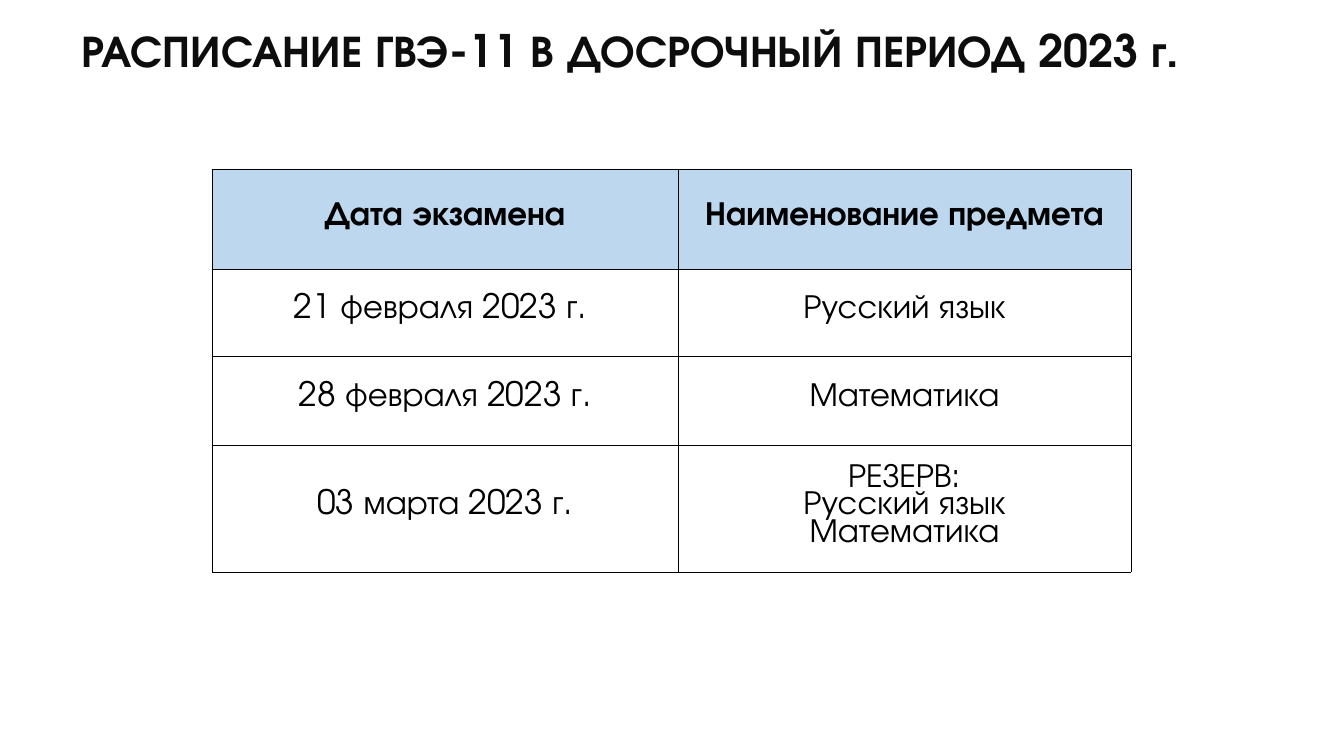
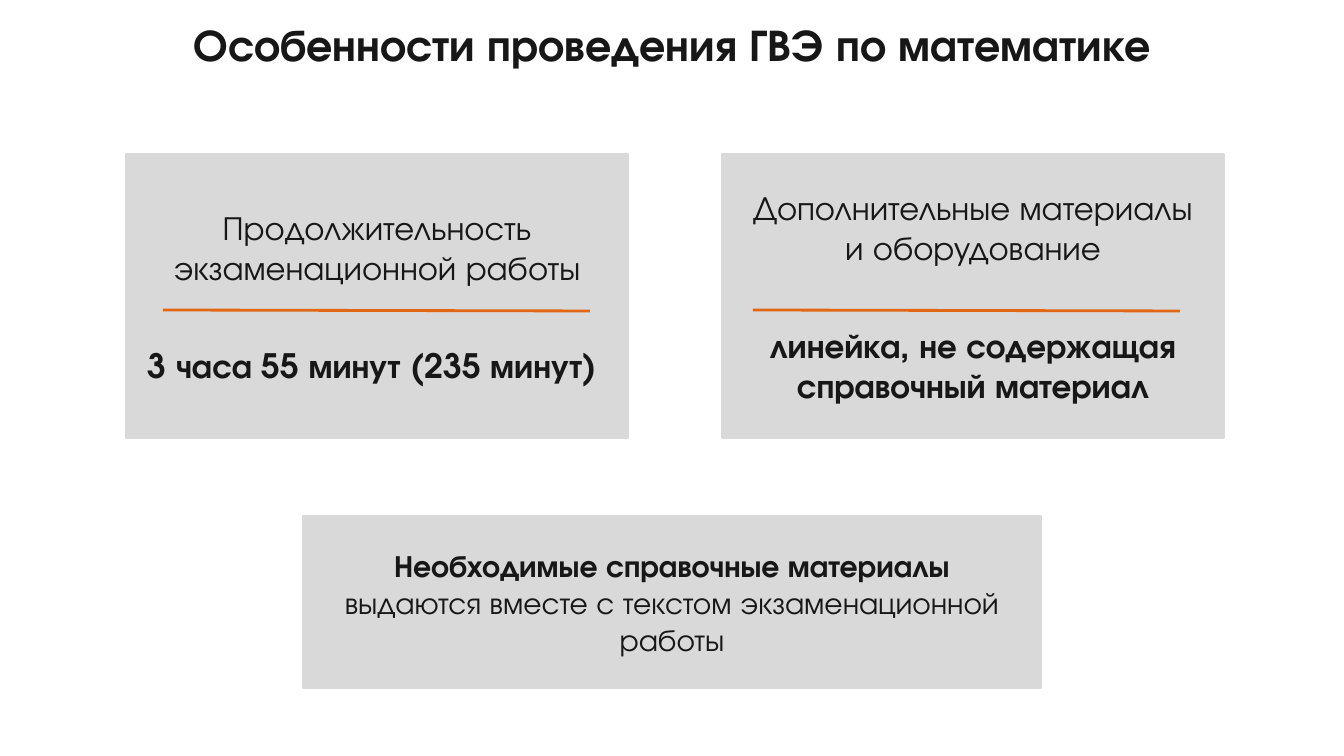
"""Build two slides on the GVE-11 exam: the schedule and the mathematics rules."""
from lxml.etree import SubElement
from pptx import Presentation
from pptx.dml.color import RGBColor
from pptx.enum.shapes import MSO_CONNECTOR, MSO_SHAPE
from pptx.enum.text import MSO_ANCHOR, MSO_AUTO_SIZE, PP_ALIGN
from pptx.oxml.ns import qn
from pptx.util import Emu, Pt

FONT = "TeX Gyre Adventor"
NBSP = chr(160)
BLACK = RGBColor(0x00, 0x00, 0x00)
NEAR_BLACK = RGBColor(0x0D, 0x0D, 0x0D)
INK = RGBColor(0x18, 0x17, 0x17)
WHITE = RGBColor(0xFF, 0xFF, 0xFF)
SKY = RGBColor(0xBD, 0xD7, 0xEE)
GREY = RGBColor(0xD9, 0xD9, 0xD9)
ORANGE = RGBColor(0xE2, 0x67, 0x14)

SCHEDULE_TITLE = "РАСПИСАНИЕ ГВЭ-11 В ДОСРОЧНЫЙ ПЕРИОД 2023 г."
SCHEDULE = [
    (["Дата экзамена"], ["Наименование предмета"]),
    (["21 февраля 2023 г. "], ["Русский язык"]),
    (["28 февраля 2023 г."], ["Математика"]),
    (["03 марта 2023 г."], ["РЕЗЕРВ:", "Русский язык", "Математика"]),
]
COL_WIDTHS = [466, 453]
ROW_HEIGHTS = [100, 87, 89, 127]

MATH_TITLE = "Особенности проведения ГВЭ по математике"
CARDS = [
    (126, 163, "Продолжительность экзаменационной работы",
     f"3{NBSP}часа 55 минут (235{NBSP}минут) "),
    (722, 753, f"Дополнительные материалы и{NBSP}оборудование",
     "линейка, не содержащая справочный материал"),
]
NOTE = ("Необходимые справочные материалы",
        f"выдаются вместе с{NBSP}текстом экзаменационной работы")
CARD_TOP, CARD_W, CARD_H = 154, 502, 284
RULE_Y, RULE_W = 310, 427


def px(n):
    return Emu(round(n * 914400 / 100.8))


def add_text(p, text, size, color, bold=False, align=PP_ALIGN.CENTER):
    p.alignment = align
    r = p.add_run()
    r.text = text
    r.font.name, r.font.size, r.font.bold = FONT, Pt(size), bold
    r.font.color.rgb = color


def add_slide(prs, title, box, color, align):
    s = prs.slides.add_slide(prs.slide_layouts[5])
    sp = s.shapes.title
    sp.left, sp.top, sp.width, sp.height = map(px, box)
    tf = sp.text_frame
    tf.auto_size = MSO_AUTO_SIZE.NONE
    tf.vertical_anchor = MSO_ANCHOR.MIDDLE
    add_text(tf.paragraphs[0], title, 32, color, True, align)
    return s


def set_borders(cell):
    tcPr = cell._tc.get_or_add_tcPr()
    for i, side in enumerate(("a:lnL", "a:lnR", "a:lnT", "a:lnB")):
        ln = SubElement(tcPr, qn(side), w=str(Pt(0.5)))
        fill = SubElement(ln, qn("a:solidFill"))
        SubElement(fill, qn("a:srgbClr"), val=str(BLACK))
        tcPr.insert(i, ln)


def add_schedule(s):
    tbl = s.shapes.add_table(len(SCHEDULE), len(COL_WIDTHS), px(212), px(169),
                             px(sum(COL_WIDTHS)), px(sum(ROW_HEIGHTS))).table
    for col, w in zip(tbl.columns, COL_WIDTHS):
        col.width = px(w)
    for i, (row, h) in enumerate(zip(SCHEDULE, ROW_HEIGHTS)):
        tbl.rows[i].height = px(h)
        for j, lines in enumerate(row):
            cell = tbl.cell(i, j)
            cell.fill.solid()
            cell.fill.fore_color.rgb = SKY if i == 0 else WHITE
            set_borders(cell)
            cell.vertical_anchor = MSO_ANCHOR.MIDDLE
            cell.margin_left = cell.margin_right = cell.margin_top = px(1)
            cell.margin_bottom = px(5)
            tf = cell.text_frame
            for n, line in enumerate(lines):
                p = tf.add_paragraph() if n else tf.paragraphs[0]
                p.line_spacing = 0.88
                add_text(p, line, 24, BLACK, i == 0)


def add_panel(s, x, y, w, h):
    sp = s.shapes.add_shape(MSO_SHAPE.RECTANGLE, px(x), px(y), px(w), px(h))
    sp.shadow.inherit = False
    sp.fill.solid()
    sp.fill.fore_color.rgb = sp.line.color.rgb = GREY
    sp.line.width = Pt(1)
    tf = sp.text_frame
    tf.word_wrap = True
    tf.vertical_anchor = MSO_ANCHOR.MIDDLE
    return tf


def add_rule(s, x):
    cn = s.shapes.add_connector(MSO_CONNECTOR.STRAIGHT, px(x), px(RULE_Y),
                                px(x + RULE_W), px(RULE_Y + 1))
    cn.line.color.rgb = ORANGE
    cn.line.width = Pt(2)
    SubElement(cn._element.spPr, qn("a:effectLst"))


def add_card(s, x, rule_x, topic, answer):
    tf = add_panel(s, x, CARD_TOP, CARD_W, CARD_H)
    p = tf.paragraphs[0]
    p.space_before, p.space_after = Pt(5.9), Pt(3)
    add_text(p, topic, 24, INK)
    p = tf.add_paragraph()
    p.space_before = Pt(38)
    add_text(p, answer, 24, INK, True)
    add_rule(s, rule_x)


def main():
    prs = Presentation()
    prs.slide_width, prs.slide_height = px(1344), px(756)

    s = add_slide(prs, SCHEDULE_TITLE, (71, 17, 1200, 65), NEAR_BLACK, PP_ALIGN.LEFT)
    add_schedule(s)

    s = add_slide(prs, MATH_TITLE, (63, 11, 1219, 65), INK, PP_ALIGN.CENTER)
    for card in CARDS:
        add_card(s, *card)
    tf = add_panel(s, 303, 516, 738, 172)
    add_text(tf.paragraphs[0], NOTE[0], 22, INK, True)
    add_text(tf.add_paragraph(), NOTE[1], 22, INK)

    prs.save("out.pptx")


if __name__ == "__main__":
    main()
